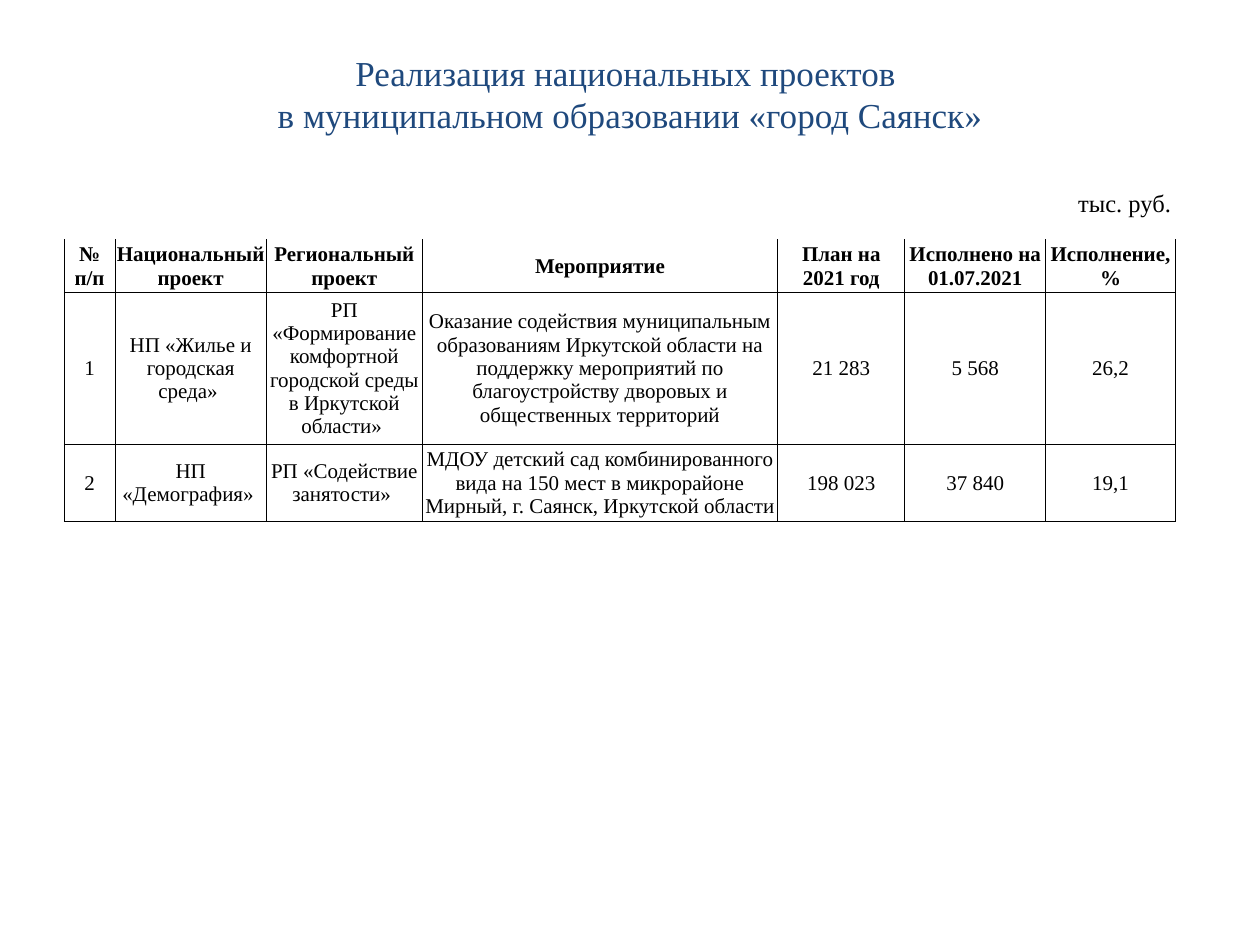
from dataclasses import dataclass

from lxml.etree import SubElement
from pptx import Presentation
from pptx.dml.color import RGBColor
from pptx.enum.text import MSO_ANCHOR as Anchor, MSO_AUTO_SIZE as AutoSize, PP_ALIGN as Align
from pptx.oxml.ns import qn
from pptx.util import Pt


@dataclass(frozen=True)
class Theme:
    font: str = "Times New Roman"
    title_color: RGBColor = RGBColor(0x1F, 0x49, 0x7D)
    text_color: RGBColor = RGBColor(0, 0, 0)
    border_color: str = "000000"
    title_size: float = 20
    unit_size: float = 14
    table_size: float = 12
    spacer_size: float = 10
    border_width: float = 0.5


THEME = Theme()

TITLE_LINES = [
    "Реализация национальных проектов ",
    "в муниципальном образовании «город Саянск»",
]
HEADERS = ["№ п/п", "Национальный проект", "Региональный проект", "Мероприятие",
           "План на 2021 год", "Исполнено на 01.07.2021", "Исполнение, %"]
PROJECTS = [
    ["1", "НП «Жилье и городская среда» ",
     "РП «Формирование комфортной городской среды в Иркутской области» ",
     "Оказание содействия муниципальным образованиям Иркутской области на поддержку "
     "мероприятий по благоустройству дворовых и общественных территорий",
     "21 283", "5 568", "26,2"],
    ["2", "НП «Демография» ", "РП «Содействие занятости» ",
     "МДОУ детский сад комбинированного вида на 150 мест в микрорайоне Мирный, "
     "г. Саянск, Иркутской области",
     "198 023", "37 840", "19,1"],
]
COLUMN_WIDTHS = [29, 86.5, 89, 203, 11.5, 61, 80.5, 74]
ROW_HEIGHTS = [14.75, 29.7, 86.9, 44]
PLAN_COLUMN = 4  # the plan spans this column and the next


def add_run(paragraph, text, size, color, bold=False):
    run = paragraph.add_run()
    run.text = text
    font = run.font
    font.name, font.size, font.bold = THEME.font, Pt(size), bold
    font.color.rgb = color


def place_title(slide, left, top, width, height):
    title = slide.shapes.title
    title.left, title.top, title.width, title.height = map(Pt, (left, top, width, height))
    frame = title.text_frame
    frame.auto_size = AutoSize.NONE
    frame.vertical_anchor = Anchor.TOP
    for index, line in enumerate(TITLE_LINES):
        paragraph = frame.add_paragraph() if index else frame.paragraphs[0]
        paragraph.alignment = Align.CENTER
        paragraph.line_spacing = Pt(24)
        add_run(paragraph, line, THEME.title_size, THEME.title_color)


def add_unit_label(slide, left, top, width, height):
    label = slide.shapes.add_textbox(*map(Pt, (left, top, width, height)))
    label.text_frame.word_wrap = True
    add_run(label.text_frame.paragraphs[0], "тыс. руб.", THEME.unit_size, THEME.text_color)


def set_borders(cell):
    properties = cell._tc.get_or_add_tcPr()
    for side in ("a:lnL", "a:lnR", "a:lnT", "a:lnB"):
        line = SubElement(properties, qn(side), w=str(Pt(THEME.border_width)))
        fill = SubElement(line, qn("a:solidFill"))
        SubElement(fill, qn("a:srgbClr"), val=THEME.border_color)


def format_cell(cell, bordered):
    if bordered:
        set_borders(cell)
    cell.fill.background()
    cell.vertical_anchor = Anchor.MIDDLE
    cell.margin_left = cell.margin_right = cell.margin_top = Pt(0.7)
    cell.margin_bottom = 0


def fill_row(table, row, texts, bold):
    table.cell(row, PLAN_COLUMN).merge(table.cell(row, PLAN_COLUMN + 1))
    columns = [column for column in range(len(COLUMN_WIDTHS)) if column != PLAN_COLUMN + 1]
    for column, text in zip(columns, texts):
        paragraph = table.cell(row, column).text_frame.paragraphs[0]
        paragraph.alignment = Align.CENTER
        add_run(paragraph, text, THEME.table_size, THEME.text_color, bold)


def add_projects_table(slide, left, top, width, height):
    """Add the table; its first row is an empty spacer without outer borders."""
    table = slide.shapes.add_table(len(ROW_HEIGHTS), len(COLUMN_WIDTHS),
                                   *map(Pt, (left, top, width, height))).table
    table.first_row = table.horz_banding = False
    for column, share in zip(table.columns, COLUMN_WIDTHS):
        column.width = Pt(width * share / sum(COLUMN_WIDTHS))
    for index, (row, row_height) in enumerate(zip(table.rows, ROW_HEIGHTS)):
        row.height = Pt(row_height)
        for cell in row.cells:
            format_cell(cell, bordered=index > 0)
            if index == 0:
                SubElement(cell.text_frame.paragraphs[0]._p, qn("a:endParaRPr"),
                           sz=str(THEME.spacer_size * 100))
    for row, texts in enumerate([HEADERS] + PROJECTS, start=1):
        fill_row(table, row, texts, bold=row == 1)


def main():
    presentation = Presentation()
    presentation.slide_width, presentation.slide_height = Pt(720), Pt(540)
    slide = presentation.slides.add_slide(presentation.slide_layouts[5])
    place_title(slide, 36.7, 26, 646.6, 55.4)
    add_projects_table(slide, 36.7, 122.4, 635, sum(ROW_HEIGHTS))
    add_unit_label(slide, 609, 103.7, 68.4, 24.5)
    presentation.save("out.pptx")


if __name__ == "__main__":
    main()
